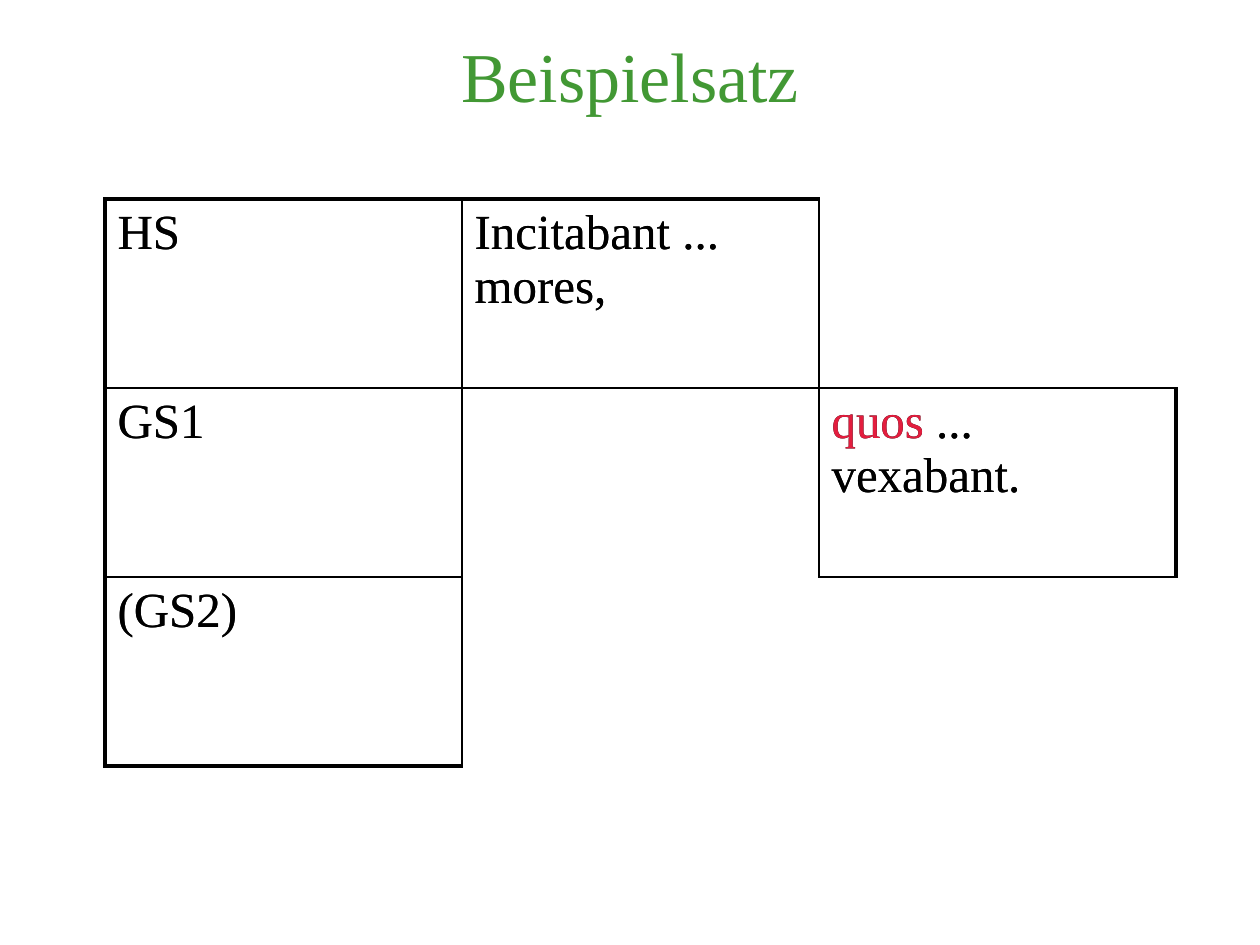
"""Build the slide 'Beispielsatz' with its stacked sentence tables."""
from typing import NamedTuple

from lxml import etree
from pptx import Presentation
from pptx import util as u
from pptx.dml.color import RGBColor
from pptx.enum import text
from pptx.oxml import ns

PX = 914400 / 126
FONT = "Times New Roman"
COLORS = {"title": "429834", "ink": "000000", "accent": "E31D3E"}
COLUMN, ROW = 357, 189
THIN, HEAVY = 1, 2.25


class Span(NamedTuple):
    words: str
    color: str = "ink"


class SentenceTable(NamedTuple):
    pronoun_color: str
    far_edge: float


TABLES = [SentenceTable("ink", THIN), SentenceTable("accent", HEAVY)]


def px(length: int) -> int:
    """Turn pixels into EMU."""
    return round(length * PX)


def rgb(name: str) -> RGBColor:
    """Look up a colour by its role."""
    return RGBColor.from_string(COLORS[name])


def draw_border(cell, side: str, width: float) -> None:
    """Draw one cell edge, or clear it when the width is zero."""
    line = etree.SubElement(cell._tc.get_or_add_tcPr(), ns.qn(f"a:ln{side}"))
    line.set("w", str(u.Pt(width)))
    if width:
        fill = etree.SubElement(line, ns.qn("a:solidFill"))
        etree.SubElement(fill, ns.qn("a:srgbClr")).set("val", COLORS["ink"])
    else:
        etree.SubElement(line, ns.qn("a:noFill"))


def edge_width(grid: list, row: int, column: int, step: tuple, far_edge: float) -> float:
    """Rule an edge if a cell beside it holds text, heavier on the outside."""
    next_row, next_column = row + step[0], column + step[1]
    inside = 0 <= next_row < len(grid) and 0 <= next_column < len(grid[0])
    if inside:
        return THIN if grid[row][column] or grid[next_row][next_column] else 0
    if not grid[row][column]:
        return 0
    return HEAVY if min(next_row, next_column) < 0 else far_edge


def draw_table(page, style: SentenceTable) -> None:
    """Draw the clause table in the given style."""
    grid = [
        [[Span("HS")], [Span("Incitabant ... mores,")], []],
        [[Span("GS1")], [], [Span("quos", style.pronoun_color), Span(" ... vexabant.")]],
        [[Span("(GS2)")], [], []],
    ]
    sides = {"L": (0, -1), "R": (0, 1), "T": (-1, 0), "B": (1, 0)}
    table = page.shapes.add_table(
        3, 3, px(105), px(199), px(3 * COLUMN), px(3 * ROW)).table
    table.first_row = table.horz_banding = False
    for row, cells in enumerate(grid):
        for column, spans in enumerate(cells):
            cell = table.cell(row, column)
            for side, step in sides.items():
                draw_border(cell, side, edge_width(grid, row, column, step, style.far_edge))
            cell.fill.background()
            para = cell.text_frame.paragraphs[0]
            para.font.name, para.font.size = FONT, u.Pt(28)
            for span in spans:
                run = para.add_run()
                run.text = span.words
                run.font.color.rgb = rgb(span.color)


def draw_title(page) -> None:
    """Place and format the slide title."""
    title = page.shapes.title
    title.left, title.top, title.width, title.height = 0, 0, px(1260), px(149)
    title.text_frame.text = "Beispielsatz"
    title.text_frame.vertical_anchor = text.MSO_ANCHOR.MIDDLE
    para = title.text_frame.paragraphs[0]
    para.alignment = text.PP_ALIGN.CENTER
    para.font.name, para.font.size = FONT, u.Pt(40)
    para.font.color.rgb = rgb("title")


def main() -> None:
    """Build and save the deck."""
    deck = Presentation()
    deck.slide_width, deck.slide_height = px(1260), px(945)
    page = deck.slides.add_slide(deck.slide_layouts[5])
    draw_title(page)
    for style in TABLES:
        draw_table(page, style)
    deck.save("out.pptx")


if __name__ == "__main__":
    main()
